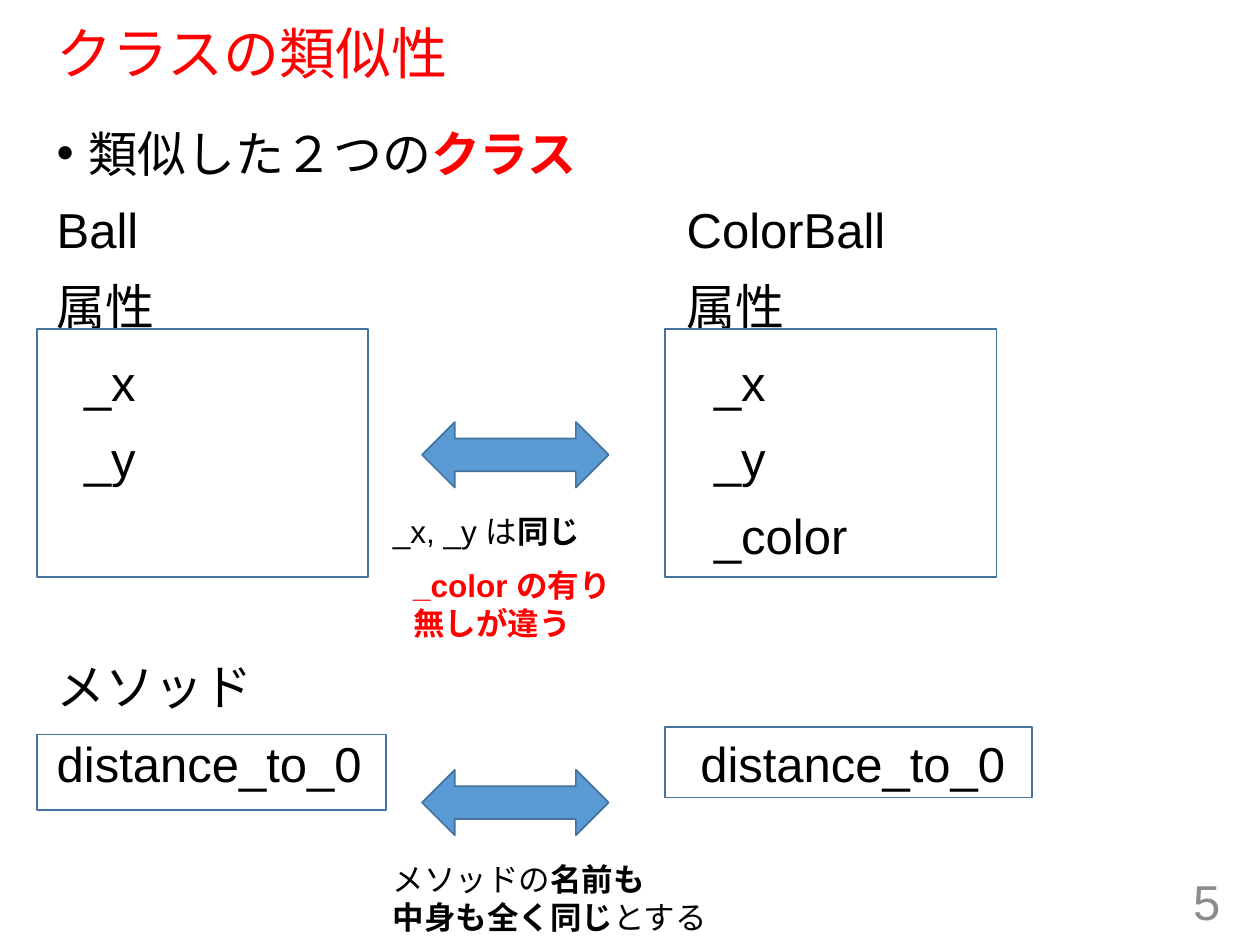
from dataclasses import dataclass

from lxml import etree
from pptx import Presentation
from pptx.dml.color import RGBColor
from pptx.enum import shapes, text
from pptx.oxml.ns import qn
from pptx.util import Cm, Pt


@dataclass(frozen=True)
class Theme:
    font: str = "Arial"
    black: RGBColor = RGBColor(0, 0, 0)
    red: RGBColor = RGBColor(0xFF, 0, 0)
    gray: RGBColor = RGBColor(0x8C, 0x8C, 0x8C)
    blue: RGBColor = RGBColor(0x5B, 0x9B, 0xD5)
    outline: RGBColor = RGBColor(0x43, 0x73, 0x9E)
    title_size: Pt = Pt(32)
    body_size: Pt = Pt(28)
    note_size: Pt = Pt(18)


theme = Theme()


def write(paragraph, parts, size):
    """Add (wording, colour, bold) parts to a paragraph as runs."""
    for wording, color, bold in parts:
        run = paragraph.add_run()
        run.text = wording
        run.font.name = theme.font
        run.font.size = size
        run.font.bold = bold
        run.font.color.rgb = color


def add_outlined(kind, left, top, width, height, fill=None):
    shape = slide.shapes.add_shape(kind, Cm(left), Cm(top), Cm(width), Cm(height))
    shape.shadow.inherit = False
    shape.line.color.rgb = theme.outline
    shape.line.width = Pt(1)
    if fill is None:
        shape.fill.background()
    else:
        shape.fill.solid()
        shape.fill.fore_color.rgb = fill


presentation = Presentation()
presentation.slide_width, presentation.slide_height = Cm(25.4), Cm(19.05)
slide = presentation.slides.add_slide(presentation.slide_layouts[1])
title, body = slide.placeholders

# Title
title.left, title.top, title.width, title.height = Cm(0.89), Cm(0.48), Cm(23.5), Cm(1.3)
title.text_frame.auto_size = text.MSO_AUTO_SIZE.NONE
title.text_frame.vertical_anchor = text.MSO_ANCHOR.MIDDLE
paragraph = title.text_frame.paragraphs[0]
paragraph.alignment = text.PP_ALIGN.LEFT
paragraph.line_spacing = 0.9
write(paragraph, [("クラスの類似性", theme.red, False)], theme.title_size)

# Bulleted heading of the body
body.left, body.top, body.width, body.height = Cm(0.89), Cm(2.36), Cm(23.5), Cm(14.81)
body.text_frame.auto_size = text.MSO_AUTO_SIZE.NONE
paragraph = body.text_frame.paragraphs[0]
properties = paragraph._p.get_or_add_pPr()
properties.set("marL", str(Cm(0.64)))
properties.set("indent", str(Cm(-0.64)))
etree.SubElement(properties, qn("a:buChar"), char="•")
paragraph.space_before = Pt(0)
write(paragraph, [("類似した２つの", theme.black, False), ("クラス", theme.red, True)],
      theme.body_size)

# Two classes side by side, one tab apart: wording, indent in cm, space before in points
column_distance, member_indent = 12.7, 0.55
rows = [
    ("Ball\tColorBall", 0, 10),
    ("属性\t属性", 0, 10),
    ("_x\t_x", member_indent, 10),
    ("_y\t_y", member_indent, 10),
    ("\t_color", member_indent, 10),
    ("メソッド", 0, 53),
    ("distance_to_0\t distance_to_0", 0, 10),
]
for wording, margin, space in rows:
    paragraph = body.text_frame.add_paragraph()
    properties = paragraph._p.get_or_add_pPr()
    properties.set("marL", str(Cm(margin)))
    properties.set("indent", "0")
    properties.set("defTabSz", str(Cm(column_distance)))
    etree.SubElement(properties, qn("a:buNone"))
    paragraph.space_before = Pt(space)
    write(paragraph, [(wording, theme.black, False)], theme.body_size)

# Frames around the methods and the attributes
for frame in [
    (0.74, 14.81, 7.04, 1.52),
    (13.41, 14.66, 7.39, 1.42),
    (13.41, 6.63, 6.68, 5.0),
    (0.74, 6.63, 6.68, 5.0),
]:
    add_outlined(shapes.MSO_SHAPE.RECTANGLE, *frame)

# Arrows between the classes
for top in (15.52, 8.51):
    add_outlined(shapes.MSO_SHAPE.LEFT_RIGHT_ARROW, 8.51, top, 3.76, 1.32, theme.blue)

# Comparison notes and page number: place, lines, size, alignment, anchor
left, right = text.PP_ALIGN.LEFT, text.PP_ALIGN.RIGHT
upper, middle = text.MSO_ANCHOR.TOP, text.MSO_ANCHOR.MIDDLE
notes = [
    ((7.67, 17.22, 7.1, 1.7),
     [[("メソッドの", theme.black, False), ("名前も", theme.black, True)],
      [("中身も全く同じ", theme.black, True), ("とする", theme.black, False)]],
     theme.note_size, left, upper),
    ((8.08, 11.28, 4.9, 1.7),
     [[("_color の有り", theme.red, True)], [("無しが違う", theme.red, True)]],
     theme.note_size, left, upper),
    ((7.67, 10.19, 4.9, 1.02),
     [[("_x, _y は", theme.black, False), ("同じ", theme.black, True)]],
     theme.note_size, left, upper),
    ((19.13, 17.65, 5.72, 1.02),
     [[("5", theme.gray, False)]], theme.body_size, right, middle),
]
for place, lines, size, alignment, anchor in notes:
    frame = slide.shapes.add_textbox(*map(Cm, place)).text_frame
    frame.word_wrap = True
    frame.vertical_anchor = anchor
    for number, parts in enumerate(lines):
        paragraph = frame.add_paragraph() if number else frame.paragraphs[0]
        paragraph.alignment = alignment
        write(paragraph, parts, size)

presentation.save("out.pptx")
